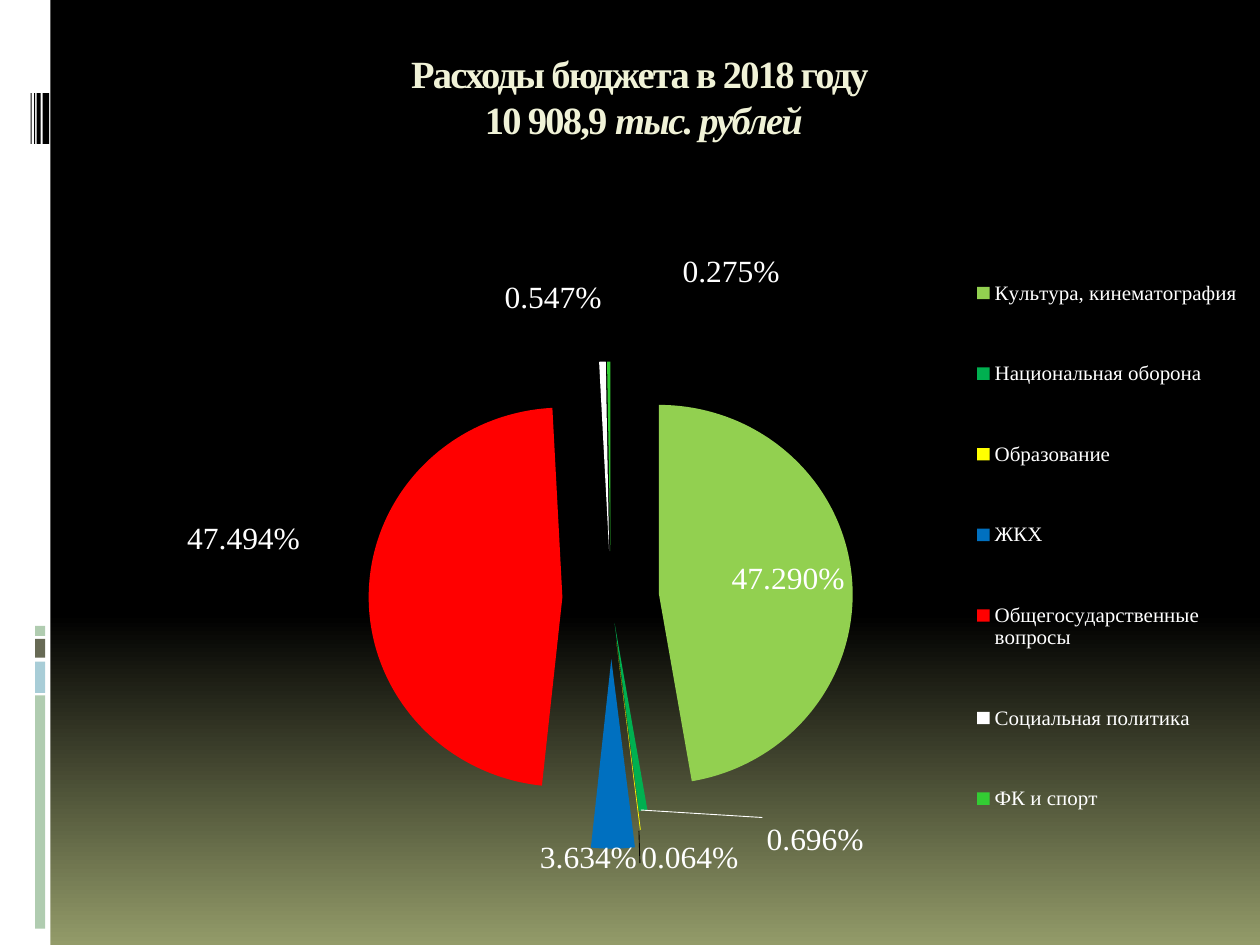
from typing import NamedTuple

from lxml.etree import SubElement
from pptx import Presentation
from pptx.chart.data import CategoryChartData
from pptx.dml.color import RGBColor
from pptx.enum.chart import XL_CHART_TYPE, XL_LABEL_POSITION, XL_LEGEND_POSITION
from pptx.enum.shapes import MSO_CONNECTOR, MSO_SHAPE
from pptx.enum.text import MSO_ANCHOR, PP_ALIGN
from pptx.oxml import parse_xml
from pptx.oxml.ns import nsdecls, qn
from pptx.util import Cm, Pt

WHITE = RGBColor(0xFF, 0xFF, 0xFF)
BLACK = RGBColor(0x00, 0x00, 0x00)
CREAM = RGBColor(0xF0, 0xF2, 0xD7)
OLIVE = RGBColor(0x93, 0x9B, 0x69)
MINT = RGBColor(0xB0, 0xCC, 0xB0)
PALE_BLUE = RGBColor(0xA8, 0xCD, 0xD7)
MOSS = RGBColor(0x67, 0x6A, 0x55)
SERIF = "Times New Roman"
PERCENT_FORMAT = "0.000%"
EXPLOSION = 25


class Bar(NamedTuple):
    left: float
    top: float
    width: float
    height: float
    color: RGBColor


class Expense(NamedTuple):
    category: str
    share: float
    color: RGBColor
    explosion: int = EXPLOSION
    label_shift: tuple[float, float] | None = None


class Leader(NamedTuple):
    start: tuple[float, float]
    end: tuple[float, float]
    color: RGBColor


SIDE_BARS = [
    Bar(0, 0, 1.02, 19.05, WHITE),
    Bar(0.71, 14.02, 0.2, 4.7, MINT),
    Bar(0.71, 13.34, 0.2, 0.63, PALE_BLUE),
    Bar(0.71, 12.88, 0.2, 0.38, MOSS),
    Bar(0.71, 12.62, 0.2, 0.2, MINT),
    Bar(0.86, 1.88, 0.13, 1.02, BLACK),
    Bar(0.74, 1.88, 0.08, 1.02, BLACK),
    Bar(0.69, 1.88, 0.02, 1.02, BLACK),
    Bar(0.62, 1.88, 0.02, 1.02, BLACK),
]

EXPENSES = [
    Expense("Культура, кинематография", 47.29, RGBColor(0x92, 0xD0, 0x50)),
    Expense("Национальная оборона", 0.696, RGBColor(0x00, 0xB0, 0x50), 13, (0.1, 0.01)),
    Expense("Образование", 0.064, RGBColor(0xFF, 0xFF, 0x00), 23, (0, 0.02)),
    Expense("ЖКХ", 3.634, RGBColor(0x00, 0x70, 0xC0), 32, (-0.02, -0.01)),
    Expense("Общегосударственные вопросы", 47.494, RGBColor(0xFF, 0x00, 0x00),
            label_shift=(-0.05, -0.08)),
    Expense("Социальная политика", 0.547, WHITE, label_shift=(-0.04, -0.06)),
    Expense("ФК и спорт", 0.275, RGBColor(0x33, 0xCC, 0x33), label_shift=(0.1, -0.1)),
]

LEADERS = [
    Leader((12.92, 16.33), (15.37, 16.48), WHITE),
    Leader((12.88, 16.75), (12.9, 17.4), BLACK),
]


def paint_background(slide) -> None:
    fill = slide.background.fill
    fill.gradient()
    fill.gradient_angle = 270
    stop_list = next(slide.element.iter(qn("a:gsLst")))
    for stop in list(stop_list):
        stop_list.remove(stop)
    for percent, color in ((0, BLACK), (65, BLACK), (100, OLIVE)):
        stop = SubElement(stop_list, qn("a:gs"), pos=str(percent * 1000))
        SubElement(stop, qn("a:srgbClr"), val=str(color))


def draw_bar(slide, bar: Bar) -> None:
    box = [Cm(length) for length in bar[:4]]
    shape = slide.shapes.add_shape(MSO_SHAPE.RECTANGLE, *box)
    shape.shadow.inherit = False
    shape.fill.solid()
    shape.fill.fore_color.rgb = bar.color
    shape.line.fill.background()


def format_font(font, size: float, color: RGBColor, name: str = SERIF) -> None:
    font.size = Pt(size)
    font.name = name
    font.color.rgb = color


def add_text(paragraph, text: str, *, size: float, color: RGBColor, bold: bool = False,
             italic: bool = False, spacing: float = 0) -> None:
    run = paragraph.add_run()
    run.text = text
    format_font(run.font, size, color)
    run.font.bold = bold
    run.font.italic = italic
    run.font._element.set("spc", str(int(spacing * 100)))


def write_title(slide) -> None:
    title = slide.shapes.title
    title.left, title.top, title.width, title.height = Cm(1.27), Cm(0.88), Cm(23.42), Cm(2.49)
    frame = title.text_frame
    frame.vertical_anchor = MSO_ANCHOR.TOP
    heading = frame.paragraphs[0]
    heading.alignment = PP_ALIGN.CENTER
    style = dict(size=22, color=CREAM, bold=True, spacing=-1)
    add_text(heading, "Расходы бюджета в 2018 году ", **style)
    heading.add_line_break()
    add_text(heading, "10 908,9 ", **style)
    add_text(heading, "тыс. рублей", italic=True, **style)


def layout_xml(x: float, y: float, size: tuple[float, float] | None = None, inner: bool = False):
    """Manual layout: a box in chart fractions, or a shift when no size is given."""
    target = '<c:layoutTarget val="inner"/>' if inner else ""
    modes = '<c:xMode val="edge"/><c:yMode val="edge"/>' if size else ""
    extent = f'<c:w val="{size[0]}"/><c:h val="{size[1]}"/>' if size else ""
    return parse_xml(
        f'<c:layout {nsdecls("c")}><c:manualLayout>{target}{modes}'
        f'<c:x val="{x}"/><c:y val="{y}"/>{extent}</c:manualLayout></c:layout>')


def explosion_xml(percent: int):
    return parse_xml(f'<c:explosion {nsdecls("c")} val="{percent}"/>')


def shifted_label(index: int, shift: tuple[float, float]):
    label = parse_xml(
        f'<c:dLbl {nsdecls("c", "a")}><c:idx val="{index}"/>'
        f'<c:numFmt formatCode="{PERCENT_FORMAT}" sourceLinked="0"/><c:spPr/>'
        f'<c:txPr><a:bodyPr/><a:p><a:pPr><a:defRPr sz="1800">'
        f'<a:solidFill><a:srgbClr val="{WHITE}"/></a:solidFill>'
        f'<a:latin typeface="{SERIF}"/></a:defRPr></a:pPr></a:p></c:txPr>'
        '<c:dLblPos val="outEnd"/><c:showLegendKey val="0"/><c:showVal val="0"/>'
        '<c:showCatName val="0"/><c:showSerName val="0"/><c:showPercent val="1"/>'
        '<c:showBubbleSize val="0"/></c:dLbl>')
    label.insert(1, layout_xml(*shift))
    return label


def draw_pie(slide) -> None:
    data = CategoryChartData()
    data.categories = [expense.category for expense in EXPENSES]
    data.add_series("Series 1", [expense.share for expense in EXPENSES])
    chart = slide.shapes.add_chart(
        XL_CHART_TYPE.PIE, Cm(0.71), Cm(4.37), Cm(24.69), Cm(13.56), data).chart
    chart.has_title = False
    format_font(chart.font, 18, WHITE, "Calibri")
    plot_area = next(chart.element.iter(qn("c:plotArea")))
    for old_layout in plot_area.findall(qn("c:layout")):
        plot_area.remove(old_layout)
    plot_area.insert(0, layout_xml(0.05, 0.22, (0.84, 0.72), inner=True))

    # Legend
    chart.has_legend = True
    legend = chart.legend
    legend.position = XL_LEGEND_POSITION.RIGHT
    legend.include_in_layout = False
    format_font(legend.font, 12, WHITE)
    legend_position = next(chart.element.iter(qn("c:legendPos")))
    legend_position.addnext(layout_xml(0.76, 0.01, (0.23, 0.98)))

    # Slices and their labels
    plot = chart.plots[0]
    plot.vary_by_categories = True
    series = plot.series[0]
    labels = series.data_labels
    labels.show_value = False
    labels.show_percentage = True
    labels.number_format = PERCENT_FORMAT
    labels.number_format_is_linked = False
    labels.position = XL_LABEL_POSITION.INSIDE_END
    format_font(labels.font, 18, WHITE)
    label_list = next(series._element.iter(qn("c:dLbls")))
    for leader_lines in label_list.findall(qn("c:showLeaderLines")):
        leader_lines.set("val", "0")
    shifted_count = 0
    for index, expense in enumerate(EXPENSES):
        slice_format = series.points[index].format
        slice_format.fill.solid()
        slice_format.fill.fore_color.rgb = expense.color
        slice_format.line.fill.background()
        slice_properties = series._element.findall(qn("c:dPt"))[index].find(qn("c:spPr"))
        slice_properties.addprevious(explosion_xml(expense.explosion))
        if expense.label_shift:
            label_list.insert(shifted_count, shifted_label(index, expense.label_shift))
            shifted_count += 1
    series._element.find(qn("c:dPt")).addprevious(explosion_xml(EXPLOSION))


def draw_leader(slide, leader: Leader) -> None:
    ends = [Cm(length) for length in leader.start + leader.end]
    connector = slide.shapes.add_connector(MSO_CONNECTOR.STRAIGHT, *ends)
    connector.line.color.rgb = leader.color
    connector.line.width = Pt(0.5)
    SubElement(connector._element.spPr, qn("a:effectLst"))


def main() -> None:
    presentation = Presentation()
    presentation.slide_width, presentation.slide_height = Cm(25.4), Cm(19.05)
    slide = presentation.slides.add_slide(presentation.slide_layouts[5])
    paint_background(slide)
    for bar in SIDE_BARS:
        draw_bar(slide, bar)
    write_title(slide)
    draw_pie(slide)
    for leader in LEADERS:
        draw_leader(slide, leader)
    presentation.save("out.pptx")


if __name__ == "__main__":
    main()
